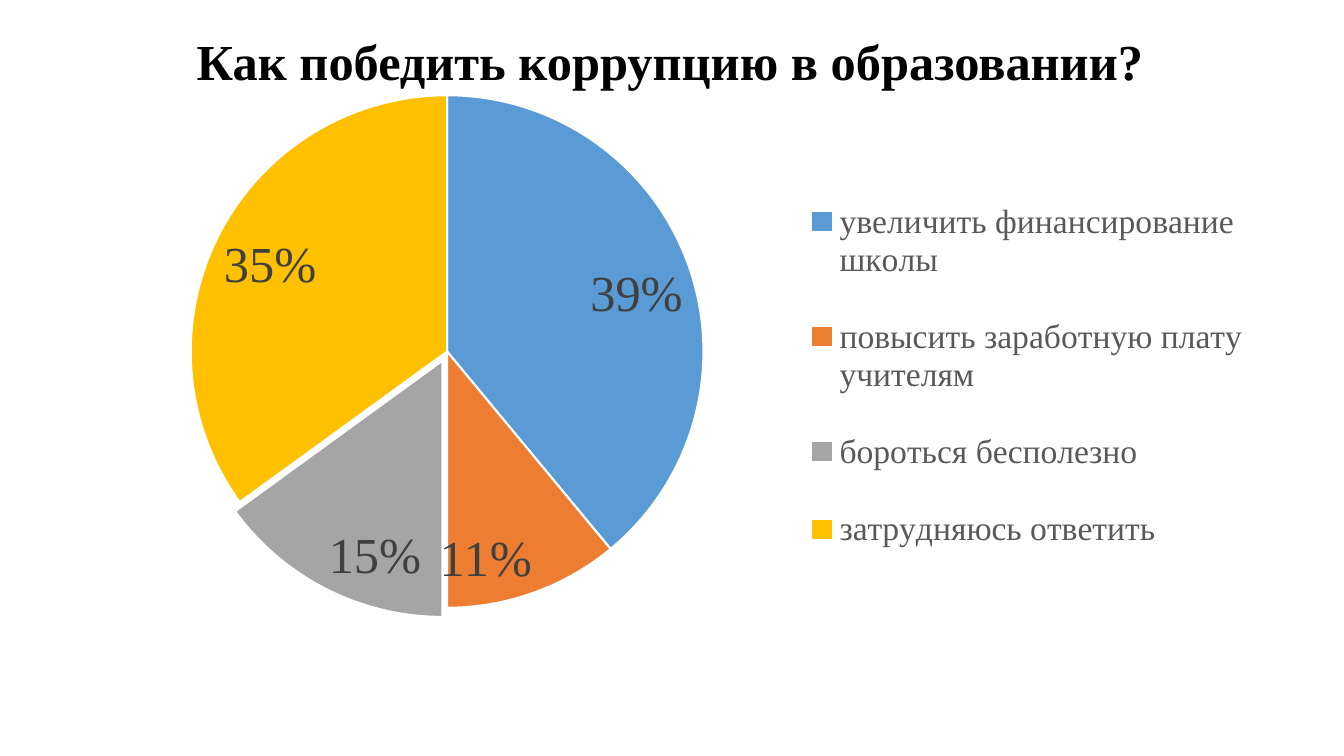
from pptx import Presentation
from pptx.chart import data
from pptx.dml.color import RGBColor
from pptx.enum import chart as kinds, text
from pptx.oxml import parse_xml
from pptx.oxml.ns import nsdecls
from pptx.util import Inches, Pt

THEME = {
    "title": {"name": "Times New Roman", "size": Pt(36), "bold": True, "color": "000000"},
    "label": {"name": "Times New Roman", "size": Pt(36), "color": "404040"},
    "legend": {"name": "Times New Roman", "size": Pt(24), "color": "595959"},
    "edge": "FFFFFF",
}
SHARES = [
    ("увеличить финансирование школы", 39, "5B9BD5"),
    ("повысить заработную плату учителям", 11, "ED7D31"),
    ("бороться бесполезно", 15, "A5A5A5"),
    ("затрудняюсь ответить", 35, "FFC000"),
]


def style(font, look):
    for key, val in look.items():
        if key == "color":
            font.color.rgb = RGBColor.from_string(val)
        else:
            setattr(font, key, val)


def layout(x, y, w, h, inner=False):
    target = '<c:layoutTarget val="inner"/>' if inner else ""
    modes = '<c:xMode val="edge"/><c:yMode val="edge"/>'
    sizes = "".join(f'<c:{tag} val="{val}"/>' for tag, val in zip("xywh", (x, y, w, h)))
    return parse_xml(f'<c:layout {nsdecls("c")}><c:manualLayout>{target}{modes}{sizes}'
                     '</c:manualLayout></c:layout>')


# Slide
deck = Presentation()
deck.slide_width, deck.slide_height = Inches(13.33), Inches(7.5)
slide = deck.slides.add_slide(deck.slide_layouts[5])

# Title
title = slide.shapes.title
box = {"left": -0.08, "top": -0.09, "width": 13.45, "height": 1.45}
for key, val in box.items():
    setattr(title, key, Inches(val))
title.text_frame.text = "Как победить коррупцию в образовании?"
title.text_frame.vertical_anchor = text.MSO_ANCHOR.MIDDLE
para = title.text_frame.paragraphs[0]
para.alignment, para.line_spacing = text.PP_ALIGN.CENTER, 0.9
style(para.runs[0].font, THEME["title"])

# Pie chart
names, vals, fills = zip(*SHARES)
poll = data.CategoryChartData()
poll.categories = names
poll.add_series("Series 1", vals)
chart = slide.shapes.add_chart(
    kinds.XL_CHART_TYPE.PIE, Inches(0.56), Inches(0.79), Inches(12.11), Inches(5.93), poll
).chart
chart.has_title = False
chart.font.name, chart.font.size = "Calibri", Pt(10)
plot = chart.plots[0]
plot.vary_by_categories = True
area = chart._chartSpace.chart.plotArea
for old in area.findall(f"{{{area.nsmap['c']}}}layout"):
    area.remove(old)
area.insert(0, layout(0.11, 0.02, 0.42, 0.87, inner=True))

# Slices, with the third one pulled out
series = plot.series[0]
for i, fill in enumerate(fills):
    form = series.points[i].format
    form.fill.solid()
    form.fill.fore_color.rgb = RGBColor.from_string(fill)
    form.line.color.rgb = RGBColor.from_string(THEME["edge"])
    form.line.width = Pt(1.5)
slice_xml = series.points[2].format.fill._xPr.getparent()
slice_xml.find(f"{{{area.nsmap['c']}}}spPr").addprevious(
    parse_xml(f'<c:explosion {nsdecls("c")} val="4"/>'))

# Percent labels
plot.has_data_labels = True
labels = plot.data_labels
labels.show_percentage, labels.show_value = True, False
labels.number_format, labels.number_format_is_linked = "0%", False
labels.position = kinds.XL_LABEL_POSITION.INSIDE_END
style(labels.font, THEME["label"])

# Legend
chart.has_legend = True
legend = chart.legend
legend.position = kinds.XL_LEGEND_POSITION.RIGHT
legend.include_in_layout = False
style(legend.font, THEME["legend"])
root = legend._element
for old in root.findall(f"{{{area.nsmap['c']}}}layout"):
    root.remove(old)
root.find(f"{{{area.nsmap['c']}}}legendPos").addnext(layout(0.61, 0.14, 0.37, 0.71))

deck.save("out.pptx")
